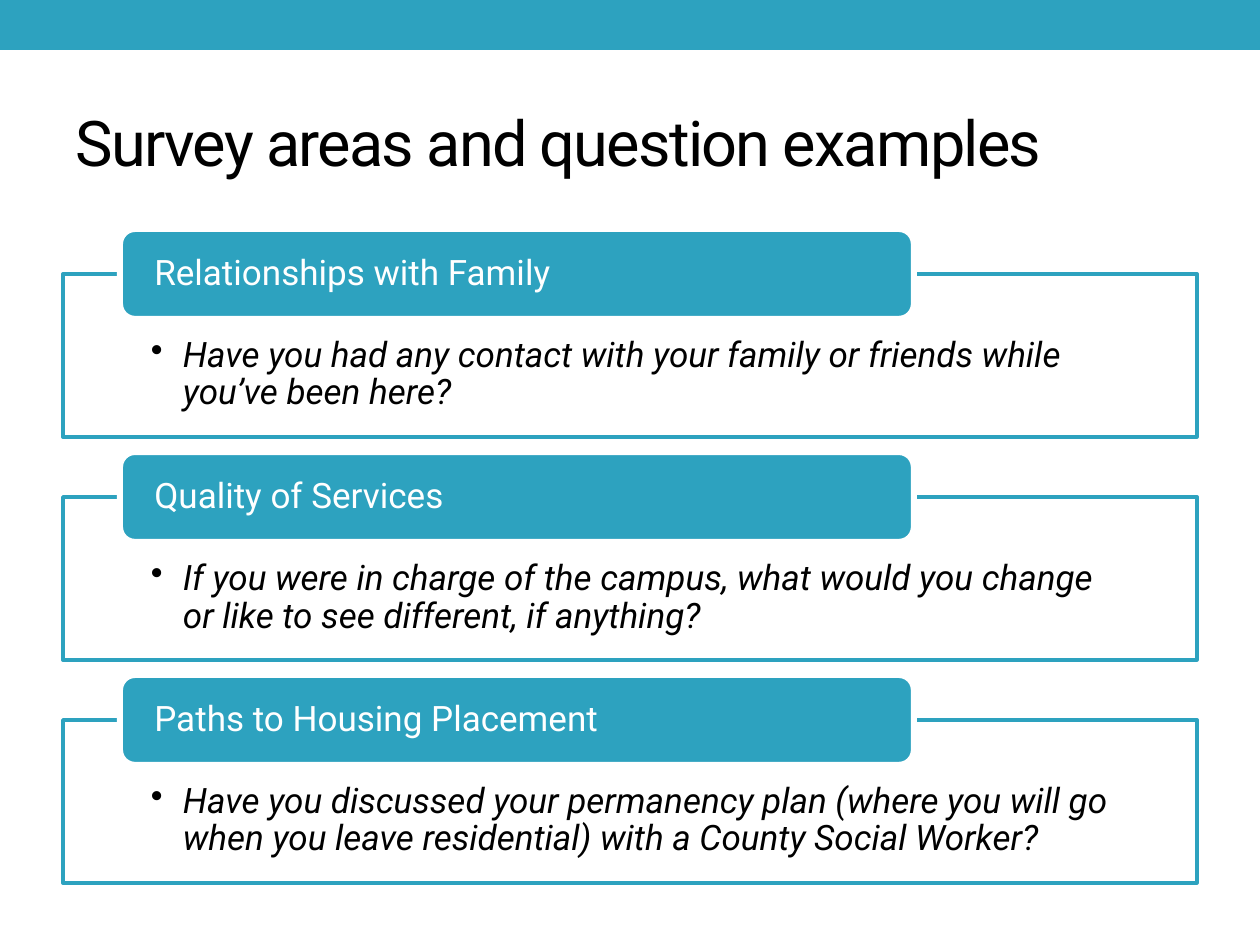
from dataclasses import dataclass

from lxml.etree import SubElement
from pptx import Presentation
from pptx.dml.color import RGBColor
from pptx.enum.shapes import MSO_SHAPE
from pptx.enum.text import MSO_ANCHOR, PP_ALIGN
from pptx.oxml.ns import qn
from pptx.util import Pt

PX = 7257


@dataclass(frozen=True)
class Theme:
    teal: RGBColor = RGBColor(0x2D, 0xA2, 0xBF)
    white: RGBColor = RGBColor(0xFF, 0xFF, 0xFF)
    black: RGBColor = RGBColor(0, 0, 0)
    font: str = "Roboto"
    head: int = 36
    text: int = 20


theme = Theme()


def write(shape, text, size=theme.text, color=theme.black, italic=False,
          anchor=MSO_ANCHOR.MIDDLE, inset=None, track=0, bullet=None, gap=None):
    frame = shape.text_frame
    frame.word_wrap = True
    frame.vertical_anchor = anchor
    if inset:
        left, top, right, base = inset
        frame.margin_left, frame.margin_right = left * PX, right * PX
        frame.margin_top, frame.margin_bottom = top * PX, base * PX
    para = frame.paragraphs[0]
    para.alignment = PP_ALIGN.LEFT
    if gap:
        para.line_spacing = gap
    if bullet:
        para.level = 1
        props = para._p.get_or_add_pPr()
        props.set("marL", str(32 * PX))
        props.set("indent", str(-32 * PX))
        SubElement(props, qn("a:buChar"), char=bullet)
    run = para.add_run()
    run.text = text
    run.font.name = theme.font
    run.font.size = Pt(size)
    run.font.italic = italic
    run.font.color.rgb = color
    if track:
        run._r.get_or_add_rPr().set("spc", str(track))


def block(kind, left, top, width, height, fill, line=None, weight=0):
    shape = slide.shapes.add_shape(kind, left * PX, top * PX, width * PX, height * PX)
    shape.shadow.inherit = False
    shape.fill.solid()
    shape.fill.fore_color.rgb = fill
    if line is None:
        shape.line.fill.background()
    else:
        shape.line.color.rgb = line
        shape.line.width = Pt(weight)
    return shape


deck = Presentation()
deck.slide_width, deck.slide_height = 1260 * PX, 945 * PX
slide = deck.slides.add_slide(deck.slide_layouts[5])

block(MSO_SHAPE.RECTANGLE, 0, 0, 1260, 50, theme.teal)

title = slide.shapes.title
title.left, title.top = 63 * PX, 73 * PX
title.width, title.height = 1134 * PX, 136 * PX
write(title, "Survey areas and question examples", size=theme.head, track=-100)

areas = [
    ("Relationships with Family",
     "Have you had any contact with your family or friends while you’ve been here?"),
    ("Quality of Services",
     "If you were in charge of the campus, what would you change or like to see different, if anything?"),
    ("Paths to Housing Placement",
     "Have you discussed your permanency plan (where you will go when you leave residential) "
     "with a County Social Worker?"),
]

for row, (area, query) in enumerate(areas):
    top = 274 + row * 223
    panel = block(MSO_SHAPE.RECTANGLE, 63, top, 1134, 163, theme.white, theme.teal, 2.08)
    tint = panel._element.spPr.find(qn("a:solidFill"))[0]
    SubElement(tint, qn("a:alpha"), val="90000")
    write(panel, query, italic=True, anchor=MSO_ANCHOR.TOP,
          inset=(88, 63, 88, 20), bullet="•", gap=0.9)
    label = block(MSO_SHAPE.ROUNDED_RECTANGLE, 120, top - 45, 794, 90,
                  theme.teal, theme.white, 3.5)
    write(label, area, color=theme.white, inset=(30, 0, 30, 0), gap=0.9)

deck.save("out.pptx")
